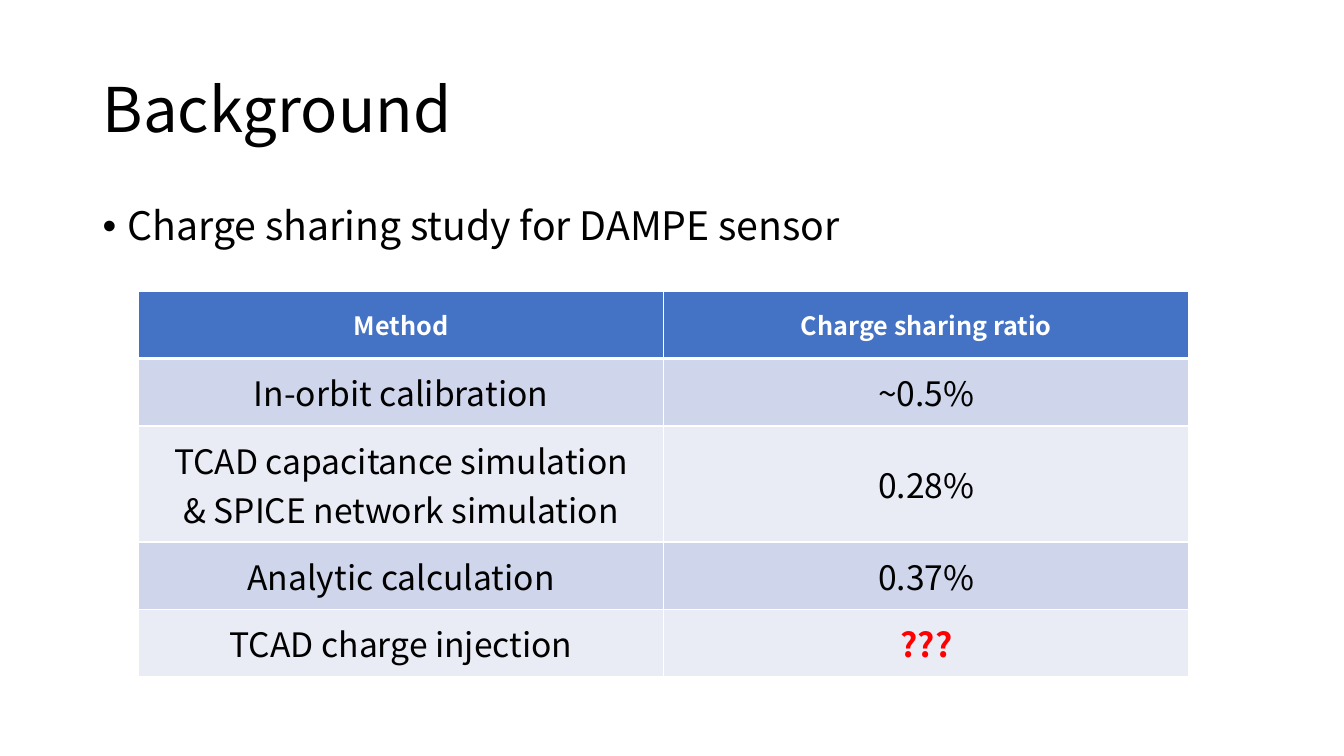
from dataclasses import dataclass

from lxml import etree
from pptx import Presentation
from pptx.dml.color import RGBColor
from pptx.enum.text import MSO_ANCHOR, MSO_AUTO_SIZE, PP_ALIGN
from pptx.oxml.ns import qn
from pptx.util import Emu, Inches, Pt

LEFT, CENTER = PP_ALIGN.LEFT, PP_ALIGN.CENTER
TOP, MIDDLE = MSO_ANCHOR.TOP, MSO_ANCHOR.MIDDLE
NO_AUTOFIT = MSO_AUTO_SIZE.NONE

FONT = "Noto Sans CJK SC"
BLACK, WHITE, RED = "000000", "FFFFFF", "FF0000"
HEADER_FILL = "4472C4"
BAND_FILLS = ("CFD5EA", "E9EBF5")
SLIDE_WIDTH, SLIDE_HEIGHT = Inches(13.33), Inches(7.5)
ROW_UNIT = Inches(0.67)
COLUMN_WIDTH = Inches(5.21)
THIN, THICK = Pt(1), Pt(3)


@dataclass(frozen=True)
class Box:
    """A frame given as shares of the slide's width and height."""
    left: float
    top: float
    width: float
    height: float

    def frame(self) -> dict[str, Emu]:
        return {
            "left": Emu(round(self.left * SLIDE_WIDTH)),
            "top": Emu(round(self.top * SLIDE_HEIGHT)),
            "width": Emu(round(self.width * SLIDE_WIDTH)),
            "height": Emu(round(self.height * SLIDE_HEIGHT)),
        }


@dataclass(frozen=True)
class TextStyle:
    size: int
    color: str = BLACK
    bold: bool = False
    align: PP_ALIGN = CENTER
    line_spacing: float = 1.0
    space_before: int = 0


@dataclass(frozen=True)
class MethodRow:
    method: str
    ratio: str
    ratio_style: TextStyle
    height: Emu = ROW_UNIT


TITLE_BOX = Box(0.069, 0.053, 0.863, 0.193)
BULLET_BOX = Box(0.069, 0.267, 0.863, 0.083)
TABLE_BOX = Box(0.103, 0.385, 0.782, 0.51)

TITLE = TextStyle(44, align=LEFT, line_spacing=0.9)
BULLET = TextStyle(28, align=LEFT, line_spacing=0.9, space_before=10)
HEADER = TextStyle(18, WHITE, bold=True)
BODY = TextStyle(24)
UNKNOWN = TextStyle(24, RED, bold=True)

HEADINGS = ("Method", "Charge sharing ratio")
METHOD_ROWS = (
    MethodRow("In-orbit calibration", "~0.5%", BODY),
    MethodRow("TCAD capacitance simulation\n& SPICE network simulation", "0.28%", BODY,
              Inches(1.15)),
    MethodRow("Analytic calculation", "0.37%", BODY),
    MethodRow("TCAD charge injection", "???", UNKNOWN),
)


def rgb(color: str) -> RGBColor:
    return RGBColor.from_string(color)


def apply(target, values: dict) -> None:
    for name, value in values.items():
        setattr(target, name, value)


def write_text(text_frame, text: str, style: TextStyle) -> None:
    text_frame.text = text
    for paragraph in text_frame.paragraphs:
        apply(paragraph, {"alignment": style.align, "line_spacing": style.line_spacing,
                          "space_before": Pt(style.space_before)})
        for run in paragraph.runs:
            apply(run.font, {"name": FONT, "size": Pt(style.size), "bold": style.bold})
            run.font.color.rgb = rgb(style.color)


def add_bullet(paragraph) -> None:
    properties = paragraph._p.get_or_add_pPr()
    indent = Inches(0.25)
    properties.set("marL", str(indent))
    properties.set("indent", str(-indent))
    etree.SubElement(properties, qn("a:buFont"), typeface="Arial")
    etree.SubElement(properties, qn("a:buChar"), char="•")


def set_borders(cell, top: Emu, bottom: Emu) -> None:
    """Draw white borders; the side ones are thin."""
    properties = cell._tc.get_or_add_tcPr()
    widths = {"a:lnL": THIN, "a:lnR": THIN, "a:lnT": top, "a:lnB": bottom}
    for position, (tag, width) in enumerate(widths.items()):
        line = etree.Element(qn(tag), w=str(width))
        fill = etree.SubElement(line, qn("a:solidFill"))
        etree.SubElement(fill, qn("a:srgbClr"), val=WHITE)
        properties.insert(position, line)


def fill_cell(cell, text: str, style: TextStyle, row: int) -> None:
    write_text(cell.text_frame, text, style)
    cell.vertical_anchor = MIDDLE
    cell.fill.solid()
    cell.fill.fore_color.rgb = rgb(BAND_FILLS[(row - 1) % 2] if row else HEADER_FILL)
    set_borders(cell, top=THICK if row == 1 else THIN, bottom=THIN if row else THICK)


def add_title(slide) -> None:
    title = slide.shapes.title
    apply(title, TITLE_BOX.frame())
    apply(title.text_frame, {"vertical_anchor": MIDDLE, "word_wrap": True,
                             "auto_size": NO_AUTOFIT})
    write_text(title.text_frame, "Background", TITLE)


def add_study_bullet(slide) -> None:
    text_frame = slide.shapes.add_textbox(**BULLET_BOX.frame()).text_frame
    apply(text_frame, {"vertical_anchor": TOP, "word_wrap": True, "auto_size": NO_AUTOFIT})
    write_text(text_frame, "Charge sharing study for DAMPE sensor", BULLET)
    add_bullet(text_frame.paragraphs[0])


def add_ratio_table(slide) -> None:
    table = slide.shapes.add_table(len(METHOD_ROWS) + 1, len(HEADINGS),
                                   **TABLE_BOX.frame()).table
    for column in table.columns:
        column.width = COLUMN_WIDTH
    table.rows[0].height = ROW_UNIT
    for column, heading in enumerate(HEADINGS):
        fill_cell(table.cell(0, column), heading, HEADER, 0)
    for row, entry in enumerate(METHOD_ROWS, start=1):
        table.rows[row].height = entry.height
        fill_cell(table.cell(row, 0), entry.method, BODY, row)
        fill_cell(table.cell(row, 1), entry.ratio, entry.ratio_style, row)


def main() -> None:
    presentation = Presentation()
    apply(presentation, {"slide_width": SLIDE_WIDTH, "slide_height": SLIDE_HEIGHT})
    title_only = presentation.slide_layouts.get_by_name("Title Only")
    slide = presentation.slides.add_slide(title_only)
    add_title(slide)
    add_study_bullet(slide)
    add_ratio_table(slide)
    presentation.save("out.pptx")


if __name__ == "__main__":
    main()
